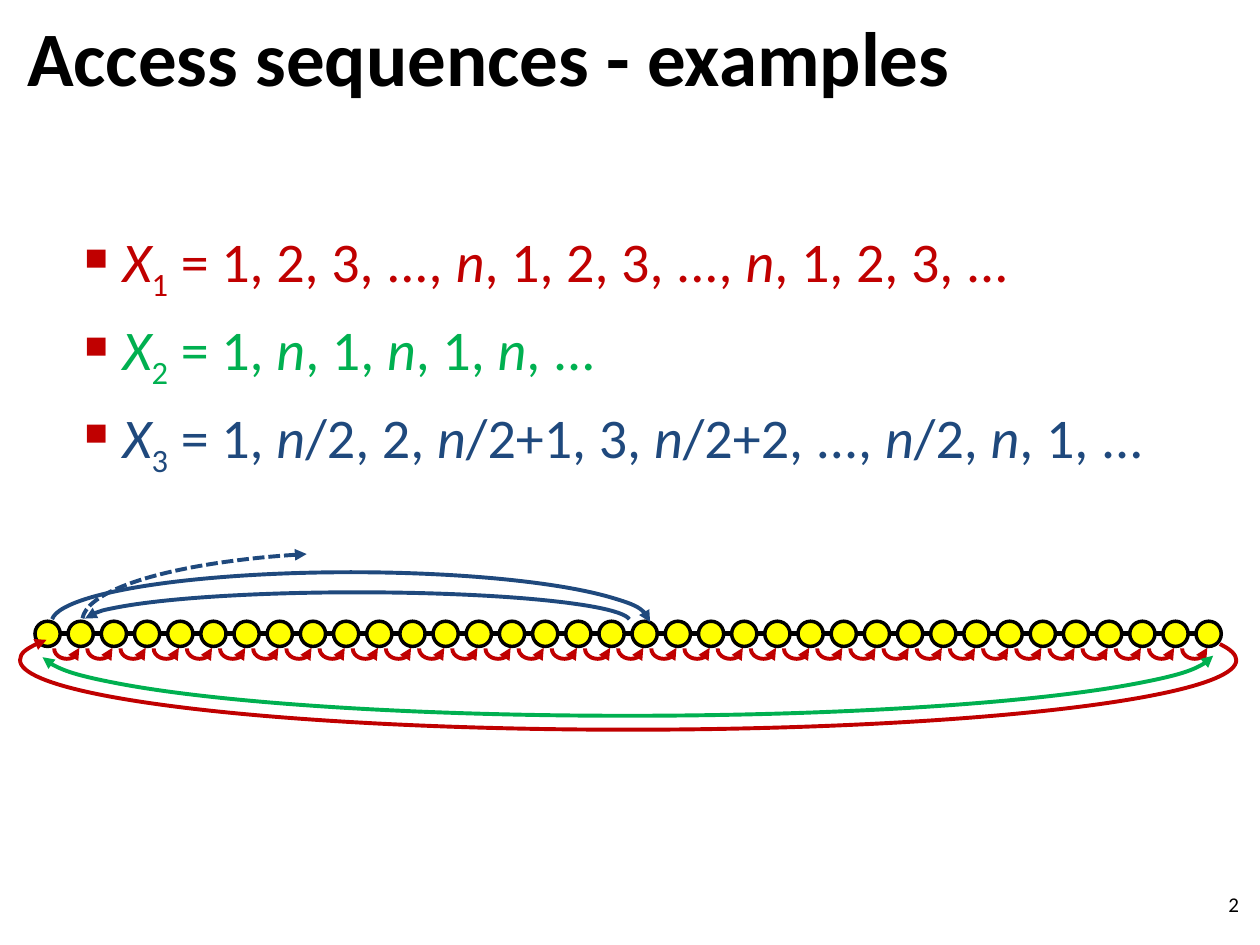
import itertools

import lxml.etree
import pptx
import pptx.dml.color
import pptx.enum.dml
import pptx.enum.shapes
import pptx.enum.text
import pptx.oxml.ns
import pptx.util

Pt = pptx.util.Pt
qn = pptx.oxml.ns.qn
SubElement = lxml.etree.SubElement
SHAPE = pptx.enum.shapes.MSO_SHAPE
ALIGN = pptx.enum.text.PP_ALIGN
ANCHOR = pptx.enum.text.MSO_ANCHOR

COLORS = {
    name: pptx.dml.color.RGBColor.from_string(value)
    for name, value in {
        "black": "000000",
        "yellow": "FFFF00",
        "red": "C00000",
        "green": "00B050",
        "blue": "1F497D",
    }.items()
}

presentation = pptx.Presentation()
presentation.slide_width, presentation.slide_height = Pt(720), Pt(540)
slide = presentation.slides.add_slide(presentation.slide_layouts[6])
shapes = slide.shapes


def add_text_frame(left, top, width, height, anchor):
    frame = shapes.add_textbox(Pt(left), Pt(top), Pt(width), Pt(height)).text_frame
    frame.word_wrap = True
    frame.vertical_anchor = anchor
    return frame


def add_arc(box, degrees, color, flip, ends, dashed=False):
    """Draw an arc between two angles, with arrowheads at the given ends."""
    arc = shapes.add_shape(SHAPE.ARC, *[Pt(length) for length in box])
    arc.shadow.inherit = False
    arc.fill.background()
    for index, angle in enumerate(degrees):
        arc.adjustments[index] = angle * 0.6  # 60000 units a degree
    for axis in flip:
        arc._element.spPr.xfrm.set("flip" + axis, "1")
    arc.line.color.rgb = COLORS[color]
    arc.line.width = Pt(2.25)
    if dashed:
        arc.line.dash_style = pptx.enum.dml.MSO_LINE.SQUARE_DOT
    for end in ends:
        SubElement(arc.line._get_or_add_ln(), qn(f"a:{end}End"), type="triangle")


# Title and slide number
for box, text, size, bold, alignment in [
    ((8.5, -2, 648, 67.5), "Access sequences - examples", 44, True, ALIGN.LEFT),
    ((547, 502.5, 168, 28.75), "2", 12, False, ALIGN.RIGHT),
]:
    paragraph = add_text_frame(*box, ANCHOR.MIDDLE).paragraphs[0]
    paragraph.alignment = alignment
    paragraph.font.name = "Calibri"
    paragraph.font.size = Pt(size)
    paragraph.font.bold = bold
    paragraph.font.color.rgb = COLORS["black"]
    paragraph.add_run().text = text

# Access sequences: letters are italic, the index after X is a subscript
sequences = [
    ("red", "X1 = 1, 2, 3, ..., n, 1, 2, 3, ..., n, 1, 2, 3, ..."),
    ("green", "X2 = 1, n, 1, n, 1, n, ..."),
    ("blue", "X3 = 1, n/2, 2, n/2+1, 3, n/2+2, ..., n/2, n, 1, ..."),
]
body = add_text_frame(36, 126, 648, 356.5, ANCHOR.TOP)
for index, (color, text) in enumerate(sequences):
    paragraph = body.add_paragraph() if index else body.paragraphs[0]
    paragraph.space_before = Pt(6.4)
    properties = paragraph._p.get_or_add_pPr()
    properties.set("marL", str(Pt(27)))
    properties.set("indent", str(-Pt(27)))
    bullet_color = SubElement(properties, qn("a:buClr"))
    SubElement(bullet_color, qn("a:srgbClr"), val=str(COLORS["red"]))
    SubElement(properties, qn("a:buChar"), char="▪")
    paragraph.font.name = "Calibri"
    paragraph.font.size = Pt(32)
    paragraph.font.color.rgb = COLORS[color]

    parts = [(text[0], True, False), (text[1], False, True)]
    for is_letter, letters in itertools.groupby(text[2:], str.isalpha):
        parts.append(("".join(letters), is_letter, False))
    for part, italic, subscript in parts:
        run = paragraph.add_run()
        run.text = part
        if italic:
            run.font.italic = True
        if subscript:
            run._r.get_or_add_rPr().set("baseline", "-25000")

# List: a line through equally spaced nodes
NODE_COUNT = 36
NODE_SIZE = 14.4
FIRST_LEFT, LAST_LEFT = 20, 683.5
PITCH = (LAST_LEFT - FIRST_LEFT) / (NODE_COUNT - 1)
NODE_TOP = 355
axis_y = Pt(NODE_TOP + NODE_SIZE / 2)

axis = shapes.add_connector(
    pptx.enum.shapes.MSO_CONNECTOR.STRAIGHT, Pt(34), axis_y, Pt(LAST_LEFT), axis_y
)
axis.line.color.rgb = COLORS["black"]
axis.line.width = Pt(3)
SubElement(axis._element.spPr, qn("a:effectLst"))

for index in range(NODE_COUNT):
    node = shapes.add_shape(
        SHAPE.OVAL, Pt(FIRST_LEFT + index * PITCH), Pt(NODE_TOP), Pt(NODE_SIZE), Pt(NODE_SIZE)
    )
    node.shadow.inherit = False
    node.fill.solid()
    node.fill.fore_color.rgb = COLORS["yellow"]
    node.line.color.rgb = COLORS["black"]
    node.line.width = Pt(2)

# First sequence: steps to the next node, then back to the start
for index in range(NODE_COUNT - 1):
    add_arc((31 + index * PITCH, 365, 14.4, 11.5), (177.97, 4.36), "red", "V", ["tail"])
add_arc((11.5, 337.5, 695, 79.5), (178.44, 2), "red", "HV", ["tail"])

# Second sequence: between both ends
add_arc((23, 335.5, 671, 73.5), (180.41, 359.44), "green", "HV", ["head", "tail"])

# Third sequence: between the two halves
add_arc((29.5, 327, 342, 57), (179.97, 359.44), "blue", "H", ["head"])
add_arc((47, 315.5, 336, 79), (316, 359.44), "blue", "H", ["head"], dashed=True)
add_arc((48, 338.5, 312, 33), (180.41, 359.44), "blue", "H", ["tail"])

presentation.save("out.pptx")
